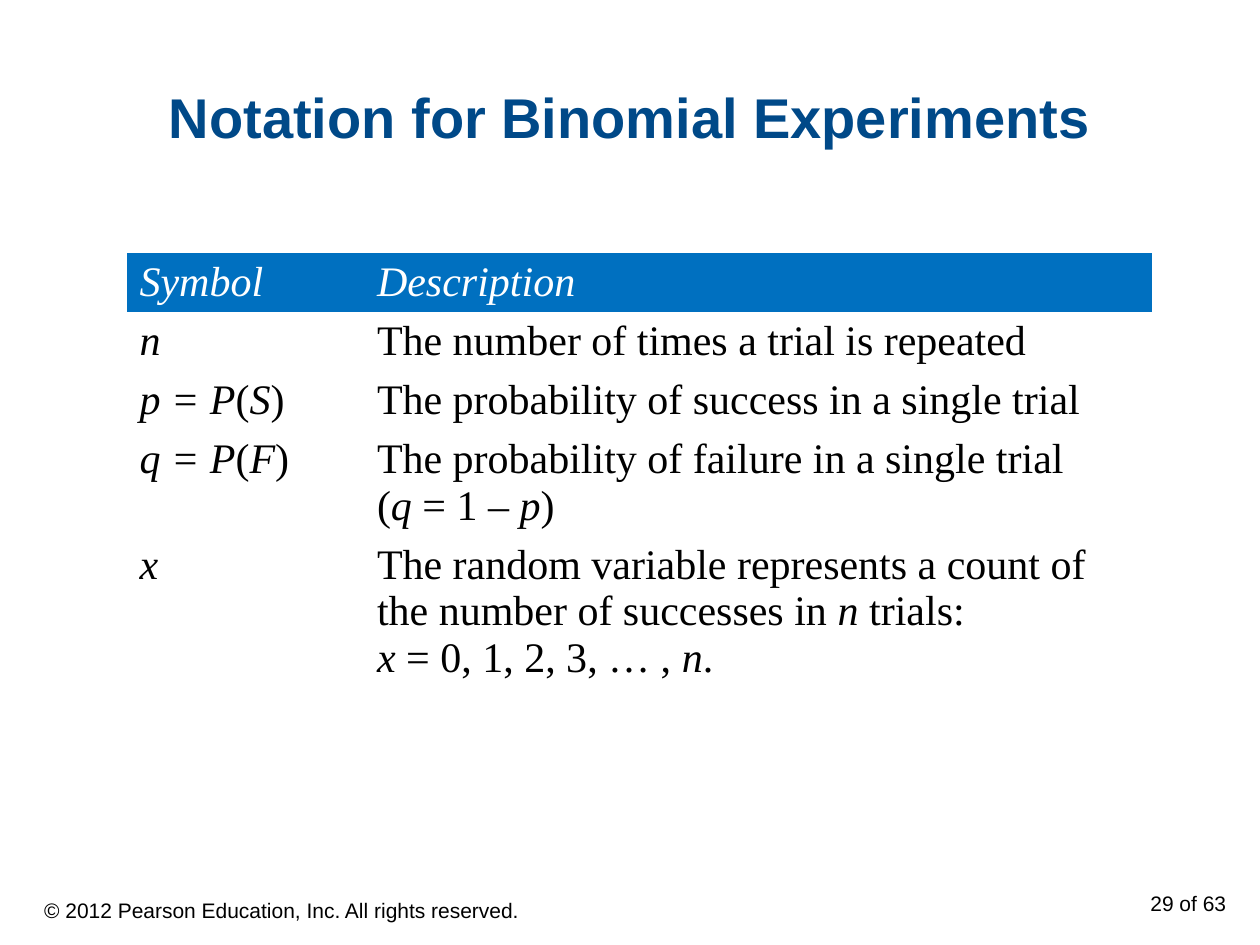
from dataclasses import dataclass

from pptx import Presentation
from pptx.dml.color import RGBColor
from pptx.enum.text import MSO_ANCHOR, PP_ALIGN
from pptx.util import Cm, Length, Pt

LEFT, CENTER, RIGHT = PP_ALIGN.LEFT, PP_ALIGN.CENTER, PP_ALIGN.RIGHT
TOP, MIDDLE = MSO_ANCHOR.TOP, MSO_ANCHOR.MIDDLE
PLAIN_TABLE_STYLE = "{2D5ABB26-0587-4C30-8999-92F81FD0307C}"
HANGING_INDENT = Cm(1.27)


@dataclass(frozen=True)
class Theme:
    heading_font: str = "Arial"
    table_font: str = "Times New Roman"
    title_size: Length = Pt(32)
    table_size: Length = Pt(24)
    footer_size: Length = Pt(12)
    title_color: RGBColor = RGBColor(0x00, 0x49, 0x88)
    header_fill: RGBColor = RGBColor(0x00, 0x70, 0xC0)
    header_text: RGBColor = RGBColor(0xFF, 0xFF, 0xFF)
    body_text: RGBColor = RGBColor(0x00, 0x00, 0x00)


@dataclass(frozen=True)
class Notation:
    """Text in which asterisks enclose italics and a newline breaks the line."""
    symbol: str
    description: str


@dataclass(frozen=True)
class Footer:
    text: str
    left: Length
    width: Length
    align: PP_ALIGN
    anchor: MSO_ANCHOR


THEME = Theme()

NOTATIONS = [
    Notation("*Symbol*", "*Description*"),
    Notation("*n*", "The number of times a trial is repeated"),
    Notation("*p = P*(*S*)", "The probability of success in a single trial"),
    Notation("*q = P*(*F*)",
             "The probability of failure in a single trial\n(*q* = 1 – *p*)"),
    Notation("*x*", "The random variable represents a count of the number of "
                    "successes in *n* trials:\n*x* = 0, 1, 2, 3, … , *n*."),
]

FOOTERS = [
    Footer("© 2012 Pearson Education, Inc. All rights reserved.",
           Cm(0.64), Cm(12.06), LEFT, MIDDLE),
    Footer("29 of 63", Cm(19.05), Cm(5.92), RIGHT, TOP),
]


def add_run(paragraph, text: str, font: str, size: Length, color: RGBColor,
            bold: bool = False, italic: bool = False) -> None:
    run = paragraph.add_run()
    run.text = text
    run.font.name, run.font.size = font, size
    run.font.bold, run.font.italic = bold, italic
    run.font.color.rgb = color


def write_cell(cell, marked_text: str, is_header: bool) -> None:
    if is_header:
        cell.fill.solid()
        cell.fill.fore_color.rgb = THEME.header_fill
    else:
        cell.fill.background()
    color = THEME.header_text if is_header else THEME.body_text
    paragraph = cell.text_frame.paragraphs[0]
    for position, part in enumerate(marked_text.split("*")):
        for line_number, line in enumerate(part.split("\n")):
            if line_number:
                paragraph.add_line_break()
            if line:
                add_run(paragraph, line, THEME.table_font, THEME.table_size,
                        color, italic=position % 2 == 1)


def add_notation_table(slide, notations: list[Notation]) -> None:
    frame = slide.shapes.add_table(len(notations), 2, Cm(2.56), Cm(5.1),
                                   Cm(20.66), Cm(9.4))
    frame.element.find(".//{*}tableStyleId").text = PLAIN_TABLE_STYLE
    table = frame.table
    table.horz_banding = False
    table.columns[0].width, table.columns[1].width = Cm(4.28), Cm(16.38)
    for row_number, notation in enumerate(notations):
        table.rows[row_number].height = Cm(1.04)
        is_header = row_number == 0
        symbol, description = table.rows[row_number].cells
        write_cell(symbol, notation.symbol, is_header)
        write_cell(description, notation.description, is_header)
        description.margin_left = Cm(0.76)
        if not is_header:
            properties = symbol.text_frame.paragraphs[0]._p.get_or_add_pPr()
            properties.set("marL", str(HANGING_INDENT))
            properties.set("indent", str(-HANGING_INDENT))
    frame.height = Cm(9.4)


def add_title(slide, text: str) -> None:
    title = slide.shapes.title
    title.left, title.top = Cm(1.27), Cm(0.76)
    title.width, title.height = Cm(22.86), Cm(3.18)
    title.text_frame.vertical_anchor = MIDDLE
    paragraph = title.text_frame.paragraphs[0]
    paragraph.alignment = CENTER
    add_run(paragraph, text, THEME.heading_font, THEME.title_size,
            THEME.title_color, bold=True)


def add_footer(slide, footer: Footer) -> None:
    box = slide.shapes.add_textbox(footer.left, Cm(17.83), footer.width, Cm(1.02))
    box.text_frame.word_wrap = True
    box.text_frame.vertical_anchor = footer.anchor
    paragraph = box.text_frame.paragraphs[0]
    paragraph.alignment = footer.align
    add_run(paragraph, footer.text, THEME.heading_font, THEME.footer_size,
            THEME.body_text)


def main() -> None:
    presentation = Presentation()
    presentation.slide_width, presentation.slide_height = Cm(25.4), Cm(19.05)
    slide = presentation.slides.add_slide(presentation.slide_layouts[5])

    # Heading
    add_title(slide, "Notation for Binomial Experiments")

    # Symbols and their meanings
    add_notation_table(slide, NOTATIONS)

    # Copyright line and page count
    for footer in FOOTERS:
        add_footer(slide, footer)

    presentation.save("out.pptx")


if __name__ == "__main__":
    main()
